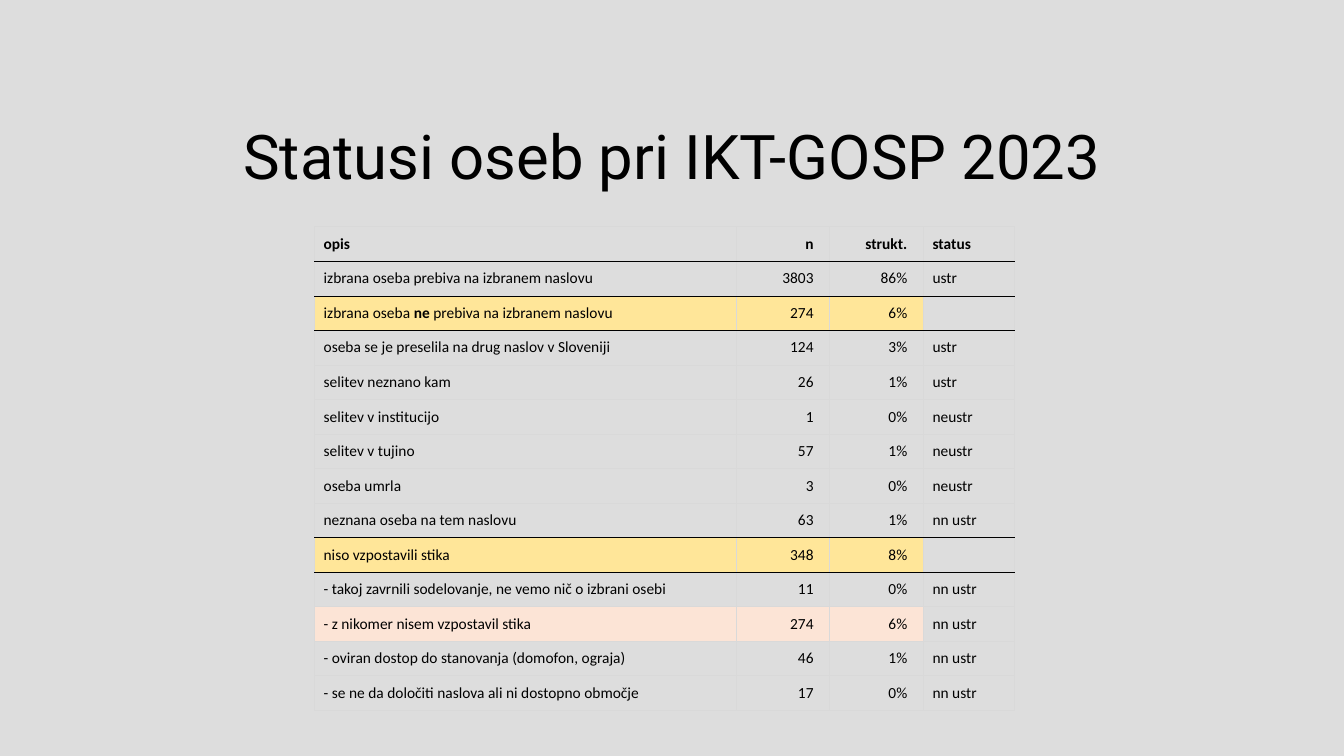
"""Build the slide with the table of person statuses in IKT-GOSP 2023."""
from lxml.etree import SubElement
from pptx import Presentation
from pptx.dml.color import RGBColor
from pptx.enum.text import MSO_ANCHOR, PP_ALIGN
from pptx.oxml.ns import qn
from pptx.util import Inches, Pt

TITLE = "Statusi oseb pri IKT-GOSP 2023"
ROWS = [
    ("opis", "n", "strukt.", "status"),
    ("izbrana oseba prebiva na izbranem naslovu", "3803", "86%", "ustr"),
    ("izbrana oseba **ne** prebiva na izbranem naslovu", "274", "6%", ""),
    ("oseba se je preselila na drug naslov v Sloveniji", "124", "3%", "ustr"),
    ("selitev neznano kam", "26", "1%", "ustr"),
    ("selitev v institucijo", "1", "0%", "neustr"),
    ("selitev v tujino", "57", "1%", "neustr"),
    ("oseba umrla", "3", "0%", "neustr"),
    ("neznana oseba na tem naslovu", "63", "1%", "nn ustr"),
    ("niso vzpostavili stika", "348", "8%", ""),
    ("- takoj zavrnili sodelovanje, ne vemo nič o izbrani osebi", "11", "0%", "nn ustr"),
    ("- z nikomer nisem vzpostavil stika", "274", "6%", "nn ustr"),
    ("- oviran dostop do stanovanja (domofon, ograja)", "46", "1%", "nn ustr"),
    ("- se ne da določiti naslova ali ni dostopno območje", "17", "0%", "nn ustr"),
]
COL_WIDTHS = [4.18, 0.77, 0.16, 0.77, 0.16, 0.9]
NUMBER_COLS, PAD_COLS, STATUS_COL = (1, 3), (2, 4), 5
ROW_FILLS = {2: "FFE699", 9: "FFE699", 11: "FCE4D6"}
RULED_ROWS = {0, 1, 2, 8, 9}
BLACK, GRID, BACKGROUND = "000000", "D9D9D9", "DDDDDD"
LEFT, TOP, HEIGHT = 3.12, 2.25, 4.8


def rgb(value):
    return RGBColor.from_string(value)


def set_font(p, name, size, bold=False):
    p.font.name = name
    p.font.size = Pt(size)
    p.font.bold = bold
    p.font.color.rgb = rgb(BLACK)


def set_border(cell, side, color):
    ln = SubElement(cell._tc.get_or_add_tcPr(), qn(f"a:ln{side}"), w=str(Pt(0.5)))
    if color:
        SubElement(SubElement(ln, qn("a:solidFill")), qn("a:srgbClr"), val=color)
    else:
        SubElement(ln, qn("a:noFill"))


def format_cell(cell, row, col, text):
    cell.margin_left = Inches(0.09 if col in (0, STATUS_COL) else 0)
    cell.margin_right = cell.margin_top = cell.margin_bottom = 0
    cell.vertical_anchor = MSO_ANCHOR.MIDDLE
    set_border(cell, "L", None if col in PAD_COLS else GRID)
    set_border(cell, "R", None if col in NUMBER_COLS else GRID)
    set_border(cell, "T", BLACK if row - 1 in RULED_ROWS else GRID)
    set_border(cell, "B", BLACK if row in RULED_ROWS else GRID)
    if row in ROW_FILLS and col != STATUS_COL:
        cell.fill.solid()
        cell.fill.fore_color.rgb = rgb(ROW_FILLS[row])
    else:
        cell.fill.background()
    p = cell.text_frame.paragraphs[0]
    p.alignment = PP_ALIGN.RIGHT if col in NUMBER_COLS else PP_ALIGN.LEFT
    set_font(p, "Calibri", 11, bold=row == 0)
    for i, part in enumerate(text.split("**")):
        if part:
            r = p.add_run()
            r.text = part
            if i % 2:
                r.font.bold = True


def add_title(s):
    tf = s.shapes.add_textbox(Inches(0.67), Inches(0.99), Inches(12), Inches(1.1)).text_frame
    tf.word_wrap = True
    tf.vertical_anchor = MSO_ANCHOR.MIDDLE
    p = tf.paragraphs[0]
    p.text = TITLE
    p.alignment = PP_ALIGN.CENTER
    set_font(p, "Roboto", 44)


def add_status_table(s):
    table = s.shapes.add_table(len(ROWS), len(COL_WIDTHS), Inches(LEFT), Inches(TOP),
                               Inches(sum(COL_WIDTHS)), Inches(HEIGHT)).table
    table.first_row = table.horz_banding = False
    for column, width in zip(table.columns, COL_WIDTHS):
        column.width = Inches(width)
    for i, (label, count, share, status) in enumerate(ROWS):
        table.rows[i].height = Inches(HEIGHT / len(ROWS))
        for j, text in enumerate((label, count, "", share, "", status)):
            format_cell(table.cell(i, j), i, j, text)


def main():
    prs = Presentation()
    prs.slide_width, prs.slide_height = Inches(13.33), Inches(7.5)
    s = prs.slides.add_slide(prs.slide_layouts[6])
    s.background.fill.solid()
    s.background.fill.fore_color.rgb = rgb(BACKGROUND)
    add_title(s)
    add_status_table(s)
    prs.save("out.pptx")


if __name__ == "__main__":
    main()
